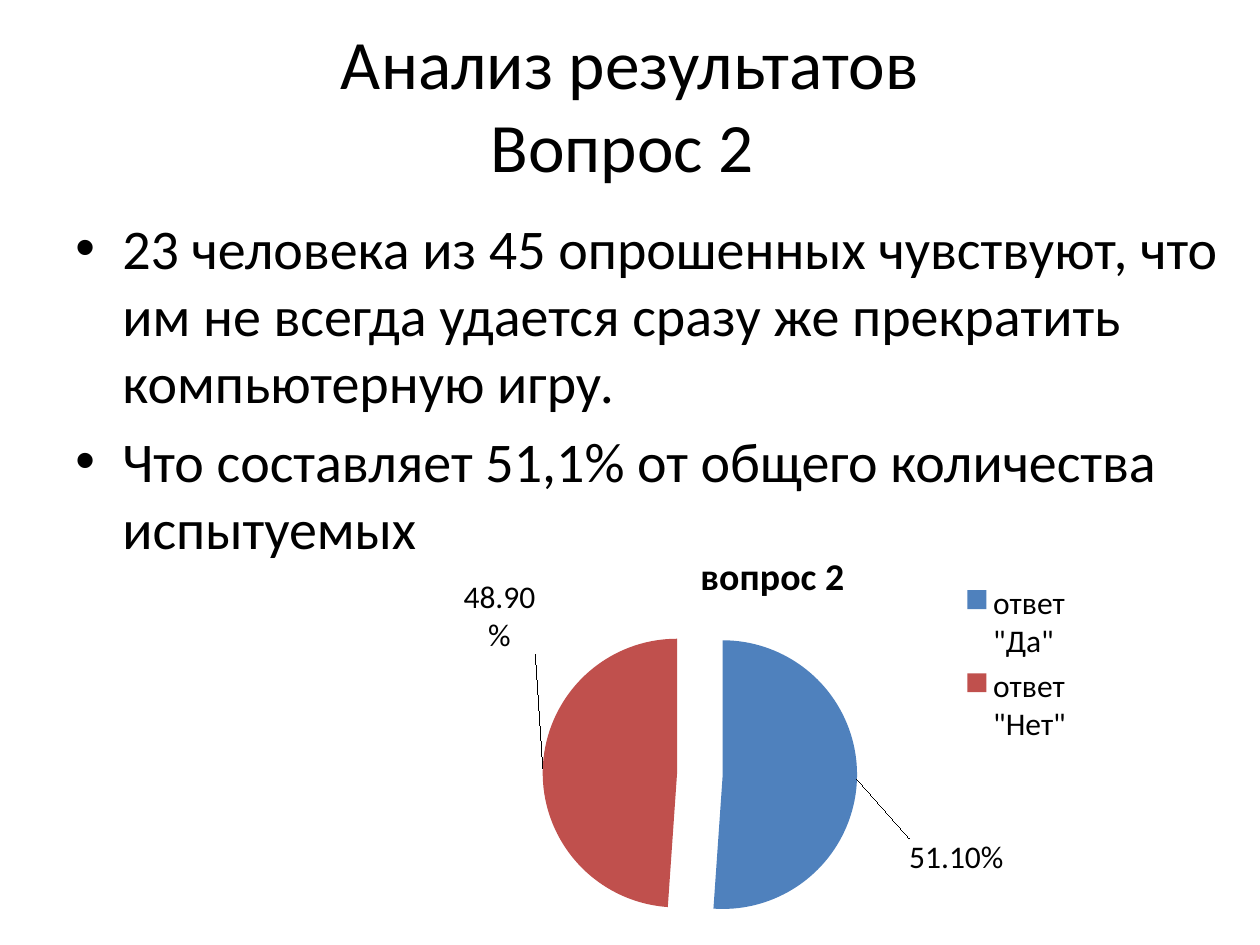
from dataclasses import dataclass

from lxml.etree import SubElement
from pptx import Presentation
from pptx.chart.data import CategoryChartData
from pptx.dml.color import RGBColor
from pptx.enum.chart import XL_CHART_TYPE, XL_LABEL_POSITION, XL_LEGEND_POSITION
from pptx.enum.text import MSO_ANCHOR, PP_ALIGN
from pptx.oxml import parse_xml
from pptx.oxml.ns import nsdecls, qn
from pptx.util import Pt

PX = 914400 / 126


@dataclass(frozen=True)
class Theme:
    font: str = "Calibri"
    ink: RGBColor = RGBColor(0, 0, 0)
    yes: RGBColor = RGBColor(0x4F, 0x81, 0xBD)
    no: RGBColor = RGBColor(0xC0, 0x50, 0x4D)
    title: float = 39.6
    body: float = 32
    head: float = 21.6
    label: float = 18


theme = Theme()


def px(*nums):
    return [round(n * PX) for n in nums]


def write(text, box, size, align=PP_ALIGN.LEFT, anchor=MSO_ANCHOR.TOP, bullet=False):
    """Add a text box with one paragraph per line of text."""
    frame = slide.shapes.add_textbox(*px(*box)).text_frame
    frame.word_wrap = True
    frame.vertical_anchor = anchor
    for i, line in enumerate(text.split("\n")):
        para = frame.add_paragraph() if i else frame.paragraphs[0]
        para.text = line
        para.alignment = align
        for run in para.runs:
            run.font.name = theme.font
            run.font.size = Pt(size)
            run.font.color.rgb = theme.ink
        if bullet:
            para.space_before = Pt(size * 0.2)
            props = para._p.get_or_add_pPr()
            indent, = px(47)
            props.set("marL", str(indent))
            props.set("indent", str(-indent))
            SubElement(props, qn("a:buFont")).set("typeface", "Arial")
            SubElement(props, qn("a:buChar")).set("char", "•")


def layout(**vals):
    """Make a manual chart layout from fractions of the chart's size."""
    tags = "".join(f'<c:{k} val="{v}"/>' for k, v in vals.items())
    return parse_xml(f'<c:layout {nsdecls("c")}><c:manualLayout>{tags}'
                     "</c:manualLayout></c:layout>")


deck = Presentation()
deck.slide_width, deck.slide_height = px(1260, 945)
slide = deck.slides.add_slide(deck.slide_layouts[6])

write("Анализ результатов\vВопрос 2 ", (63, 38, 1134, 130), theme.title,
      align=PP_ALIGN.CENTER, anchor=MSO_ANCHOR.MIDDLE)
write("23 человека из 45 опрошенных чувствуют, что им не всегда удается "
      "сразу же прекратить компьютерную игру.\n"
      "Что составляет 51,1% от общего количества испытуемых",
      (63, 207, 1197, 381), theme.body, bullet=True)

# Pie chart
data = CategoryChartData(number_format="0.00%")
data.categories = ['ответ "Да"', 'ответ "Нет"']
data.add_series("вопрос 2", (0.511, 0.489))
chart = slide.shapes.add_chart(XL_CHART_TYPE.PIE, *px(444, 512, 640, 433), data).chart
chart.font.name = theme.font
chart.font.size = Pt(theme.label)
chart.font.color.rgb = theme.ink

chart.has_title = True
head = chart.chart_title.text_frame
head.text = "вопрос 2"
font = head.paragraphs[0].runs[0].font
font.name, font.size, font.bold = theme.font, Pt(theme.head), True
font.color.rgb = theme.ink

chart.has_legend = True
chart.legend.position = XL_LEGEND_POSITION.RIGHT
chart.legend.include_in_layout = False

# Hand-set places of the title, legend and pie
edge = dict(xMode="edge", yMode="edge")
area = chart._chartSpace.chart
spots = (
    (area.find(qn("c:title")), "c:tx", layout(**edge, x=0.39, y=0.07)),
    (area.find(qn("c:legend")), "c:legendPos",
     layout(**edge, x=0.8, y=0.15, w=0.19, h=0.4)),
    (area.plotArea, None,
     layout(layoutTarget="inner", **edge, x=0.19, y=0.29, w=0.42, h=0.63)),
)
for part, prev, spot in spots:
    for old in part.findall(qn("c:layout")):
        part.remove(old)
    part.insert(part.index(part.find(qn(prev))) + 1 if prev else 0, spot)

plot = chart.plots[0]
plot.vary_by_categories = True
pie = plot.series[0]
labels = pie.data_labels
labels.show_value = True
labels.number_format = "0.00%"
labels.number_format_is_linked = False
labels.position = XL_LABEL_POSITION.OUTSIDE_END

# Slices pulled apart, each label moved off its slice
for i, (fill, x, y) in enumerate(((theme.yes, 0.07, 0.18), (theme.no, 0, -0.35))):
    point = pie.points[i]
    point.format.fill.solid()
    point.format.fill.fore_color.rgb = fill
    point.data_label.position = XL_LABEL_POSITION.OUTSIDE_END
    pie._element.findall(".//" + qn("c:dLbl"))[i].insert(1, layout(x=x, y=y))
    slice_ = pie._element.findall(qn("c:dPt"))[i]
    burst = parse_xml(f'<c:explosion {nsdecls("c")} val="17"/>')
    slice_.insert(slice_.index(slice_.find(qn("c:spPr"))), burst)

deck.save("out.pptx")
